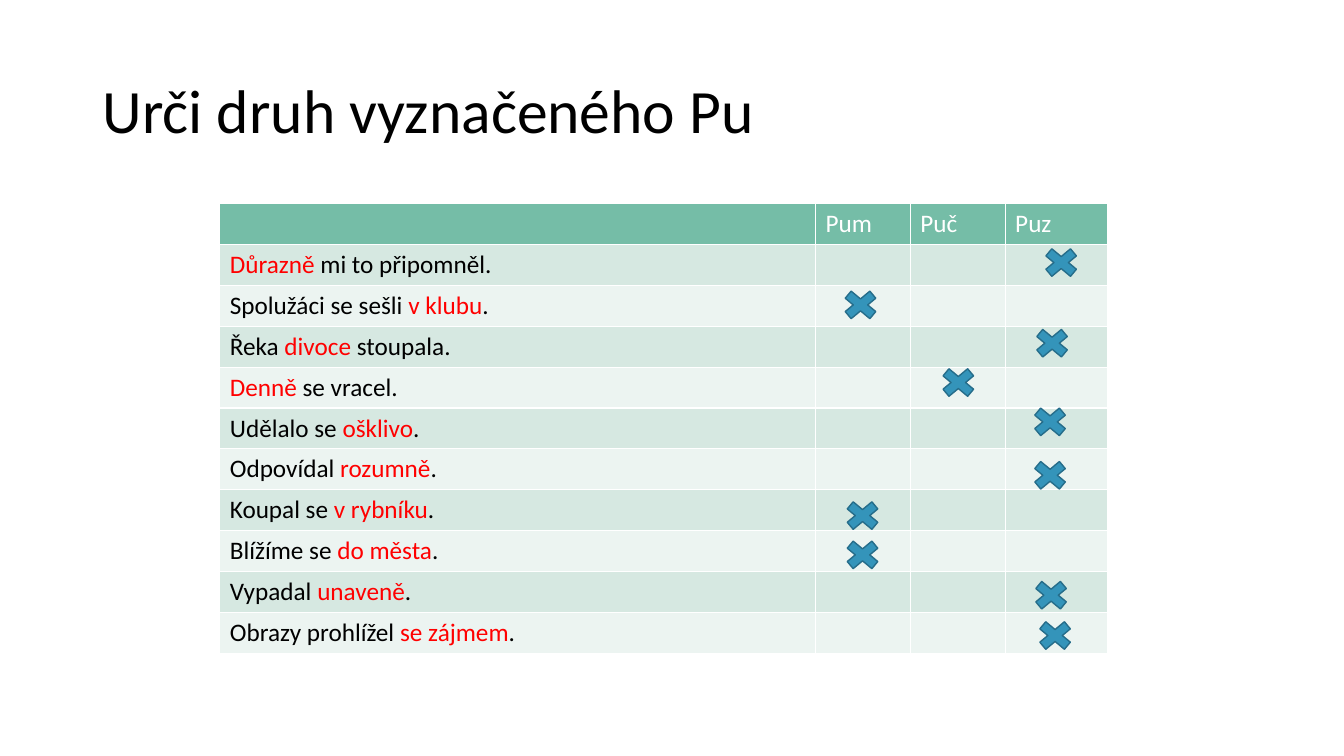
from dataclasses import dataclass

import pptx
import pptx.dml.color
import pptx.enum.shapes
import pptx.enum.text
import pptx.util
from pptx.util import Inches


@dataclass(frozen=True)
class Theme:
    font: str = "Calibri"
    title_size: int = 44
    table_size: int = 18
    text: str = "000000"
    highlight: str = "FF0000"
    header_text: str = "FFFFFF"
    header_fill: str = "75BDA7"
    band_fills: tuple = ("D6E8E1", "ECF4F1")
    mark_fill: str = "3494BA"
    mark_line: str = "266D8A"


THEME = Theme()
TITLE = "Urči druh vyznačeného Pu"
HEADERS = ("", "Pum", "Puč", "Puz")
COLUMN_WIDTHS = (5.91, 0.94, 0.94, 1.02)
TABLE_HEIGHT = 4.46
SENTENCES = (
    ("", "Důrazně ", "mi to připomněl."),
    ("Spolužáci se sešli ", "v klubu", "."),
    ("Řeka ", "divoce", " stoupala."),
    ("", "Denně", " se vracel."),
    ("Udělalo se ", "ošklivo", "."),
    ("Odpovídal ", "rozumně", "."),
    ("Koupal se ", "v rybníku", "."),
    ("Blížíme se ", "do města", "."),
    ("Vypadal ", "unaveně", "."),
    ("Obrazy prohlížel ", "se zájmem", "."),
)
MARKS = (
    (10.29, 2.41),
    (8.3, 2.83),
    (10.2, 3.21),
    (9.27, 3.6),
    (10.18, 3.99),
    (10.18, 4.52),
    (8.32, 4.92),
    (8.32, 5.31),
    (10.19, 5.71),
    (10.23, 6.11),
)


def rgb(value):
    return pptx.dml.color.RGBColor.from_string(value)


def add_span(para, text, size, color):
    span = para.add_run()
    span.text = text
    span.font.name = THEME.font
    span.font.size = pptx.util.Pt(size)
    span.font.bold = False
    span.font.color.rgb = rgb(color)


def set_title(page):
    box = page.shapes.title
    box.left, box.top = Inches(0.92), Inches(0.4)
    box.width, box.height = Inches(11.5), Inches(1.45)
    box.text_frame.vertical_anchor = pptx.enum.text.MSO_ANCHOR.MIDDLE
    para = box.text_frame.paragraphs[0]
    para.alignment = pptx.enum.text.PP_ALIGN.LEFT
    para.line_spacing = 0.9
    add_span(para, TITLE, THEME.title_size, THEME.text)


def fill_cell(cell, fill, spans):
    cell.fill.solid()
    cell.fill.fore_color.rgb = rgb(fill)
    para = cell.text_frame.paragraphs[0]
    for text, color in spans:
        if text:
            add_span(para, text, THEME.table_size, color)


def add_sentence_table(page):
    row_count = len(SENTENCES) + 1
    table = page.shapes.add_table(
        row_count, len(HEADERS), Inches(2.18), Inches(2.02),
        Inches(sum(COLUMN_WIDTHS)), Inches(TABLE_HEIGHT),
    ).table
    for column, width in zip(table.columns, COLUMN_WIDTHS):
        column.width = Inches(width)
    for row in table.rows:
        row.height = Inches(TABLE_HEIGHT / row_count)
    for index, header in enumerate(HEADERS):
        fill_cell(table.cell(0, index), THEME.header_fill, [(header, THEME.header_text)])
    colors = (THEME.text, THEME.highlight, THEME.text)
    for row_index, sentence in enumerate(SENTENCES, 1):
        fill = THEME.band_fills[(row_index - 1) % 2]
        fill_cell(table.cell(row_index, 0), fill, zip(sentence, colors))
        for column_index in range(1, len(HEADERS)):
            fill_cell(table.cell(row_index, column_index), fill, [])


def add_mark(page, left, top):
    mark = page.shapes.add_shape(
        pptx.enum.shapes.MSO_SHAPE.MATH_MULTIPLY,
        Inches(left), Inches(top), Inches(0.47), Inches(0.39),
    )
    mark.shadow.inherit = False
    mark.fill.solid()
    mark.fill.fore_color.rgb = rgb(THEME.mark_fill)
    mark.line.color.rgb = rgb(THEME.mark_line)
    mark.line.width = pptx.util.Pt(1)


def main():
    deck = pptx.Presentation()
    deck.slide_width, deck.slide_height = Inches(13.33), Inches(7.5)
    page = deck.slides.add_slide(deck.slide_layouts[5])
    set_title(page)
    add_sentence_table(page)
    for left, top in MARKS:
        add_mark(page, left, top)
    deck.save("out.pptx")


if __name__ == "__main__":
    main()
